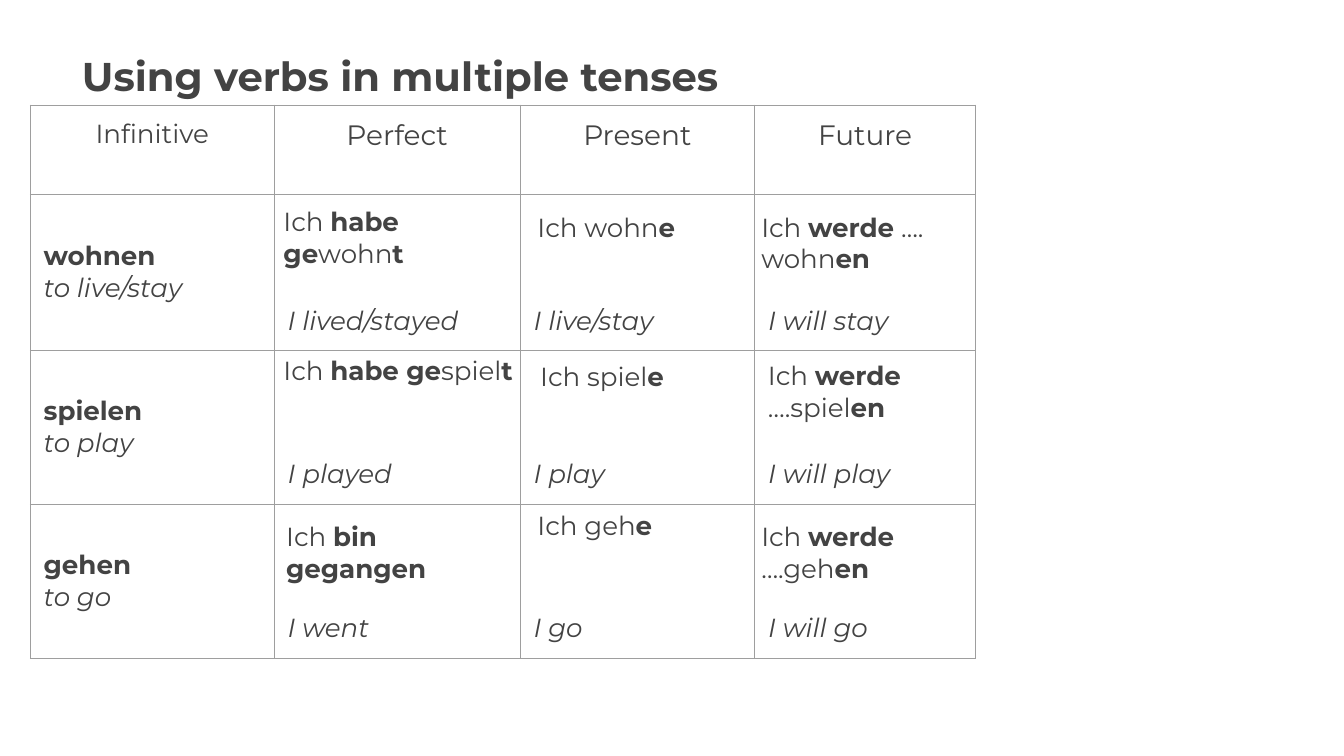
from lxml.etree import SubElement
from pptx import Presentation
from pptx.dml.color import RGBColor
from pptx.enum.text import MSO_ANCHOR, PP_ALIGN
from pptx.oxml.ns import qn
from pptx.util import Inches, Pt

COLOURS = {"text": "434343", "border": "9E9E9E", "cell": "FFFFFF"}
BODY = {"name": "Montserrat", "size": Pt(28), "bold": False, "italic": False}
BOLD = {**BODY, "bold": True}
ITALIC = {**BODY, "italic": True}
HEADING = {**BODY, "size": Pt(30)}
TITLE = {**BOLD, "size": Pt(43)}

COLUMN_WIDTHS = (3.63, 3.66, 3.49, 3.29)
ROW_HEIGHTS = (1.33, 2.32, 2.29, 2.29)
TENSES = ("Infinitive", "Perfect", "Present", "Future")
VERBS = (
    ("wohnen", "to live/stay", "I lived/stayed", "I live/stay", "I will stay"),
    ("spielen", "to play", "I played", "I play", "I will play"),
    ("gehen", "to go", "I went", "I go", "I will go"),
)
GERMAN_FORMS = (
    (4.12, 2.96, 3.61, 1.08, "Ich *habe ge*wohn*t"),
    (7.9, 3.04, 2.94, 0.81, "Ich wohn*e"),
    (11.23, 3.04, 3.42, 1.25, "Ich *werde* …. wohn*en"),
    (4.12, 5.17, 3.61, 1.08, "Ich *habe ge*spiel*t"),
    (7.94, 5.26, 3.28, 0.81, "Ich spiel*e"),
    (11.33, 5.25, 3.19, 1.25, "Ich *werde* ….spiel*en"),
    (4.16, 7.65, 3.61, 1.25, "Ich *bin gegangen"),
    (7.9, 7.48, 3.19, 0.81, "Ich geh*e"),
    (11.23, 7.65, 3.38, 1.08, "Ich *werde* ….geh*en"),
)


def set_values(target, values):
    for name, value in values.items():
        setattr(target, name, value)


def set_margins(target, margin):
    for side in ("left", "top", "right", "bottom"):
        setattr(target, f"margin_{side}", Inches(margin))


def add_span(para, text, style):
    span = para.add_run()
    span.text = text
    set_values(span.font, style)
    span.font.color.rgb = RGBColor.from_string(COLOURS["text"])


def add_box(page, left, top, width, height, margin):
    box = page.shapes.add_textbox(*map(Inches, (left, top, width, height)))
    box.text_frame.word_wrap = True
    set_margins(box.text_frame, margin)
    return box.text_frame.paragraphs[0]


def add_title(page, text):
    para = add_box(page, 1.22, 0.65, 17.99, 1.78, 0)
    para.line_spacing = 1.15
    add_span(para, text, TITLE)


def add_german_form(page, left, top, width, height, marked_text):
    para = add_box(page, left, top, width, height, 0.1)
    for index, part in enumerate(marked_text.split("*")):
        add_span(para, part, BOLD if index % 2 else BODY)


def add_borders(cell):
    properties = cell._tc.get_or_add_tcPr()
    for index, side in enumerate(("lnL", "lnR", "lnT", "lnB")):
        line = properties.makeelement(qn(f"a:{side}"), {"w": str(Pt(0.75))})
        fill = SubElement(line, qn("a:solidFill"))
        SubElement(fill, qn("a:srgbClr"), val=COLOURS["border"])
        properties.insert(index, line)


def fill_cell(cell, lines, anchor, align=PP_ALIGN.LEFT):
    set_margins(cell, 0.2)
    cell.vertical_anchor = anchor
    cell.fill.solid()
    cell.fill.fore_color.rgb = RGBColor.from_string(COLOURS["cell"])
    add_borders(cell)
    frame = cell.text_frame
    for index, (text, style) in enumerate(lines):
        para = frame.add_paragraph() if index else frame.paragraphs[0]
        para.alignment = align
        add_span(para, text, style)


def add_verb_table(page):
    size = (sum(COLUMN_WIDTHS), sum(ROW_HEIGHTS))
    table = page.shapes.add_table(
        len(ROW_HEIGHTS), len(COLUMN_WIDTHS), *map(Inches, (0.45, 1.56, *size))
    ).table
    for column, width in zip(table.columns, COLUMN_WIDTHS):
        column.width = Inches(width)
    for row, height in zip(table.rows, ROW_HEIGHTS):
        row.height = Inches(height)
    for column, tense in enumerate(TENSES):
        style = HEADING if column else BODY
        fill_cell(table.cell(0, column), [(tense, style)], MSO_ANCHOR.TOP, PP_ALIGN.CENTER)
    for row, (verb, meaning, *translations) in enumerate(VERBS, 1):
        fill_cell(table.cell(row, 0), [(verb, BOLD), (meaning, ITALIC)], MSO_ANCHOR.MIDDLE)
        for column, translation in enumerate(translations, 1):
            fill_cell(table.cell(row, column), [(translation, ITALIC)], MSO_ANCHOR.BOTTOM)


def main():
    deck = Presentation()
    set_values(deck, {"slide_width": Inches(20), "slide_height": Inches(11.25)})
    page = deck.slides.add_slide(deck.slide_layouts[6])
    add_title(page, "Using verbs in multiple tenses")
    add_verb_table(page)
    for form in GERMAN_FORMS:
        add_german_form(page, *form)
    deck.save("out.pptx")


if __name__ == "__main__":
    main()
